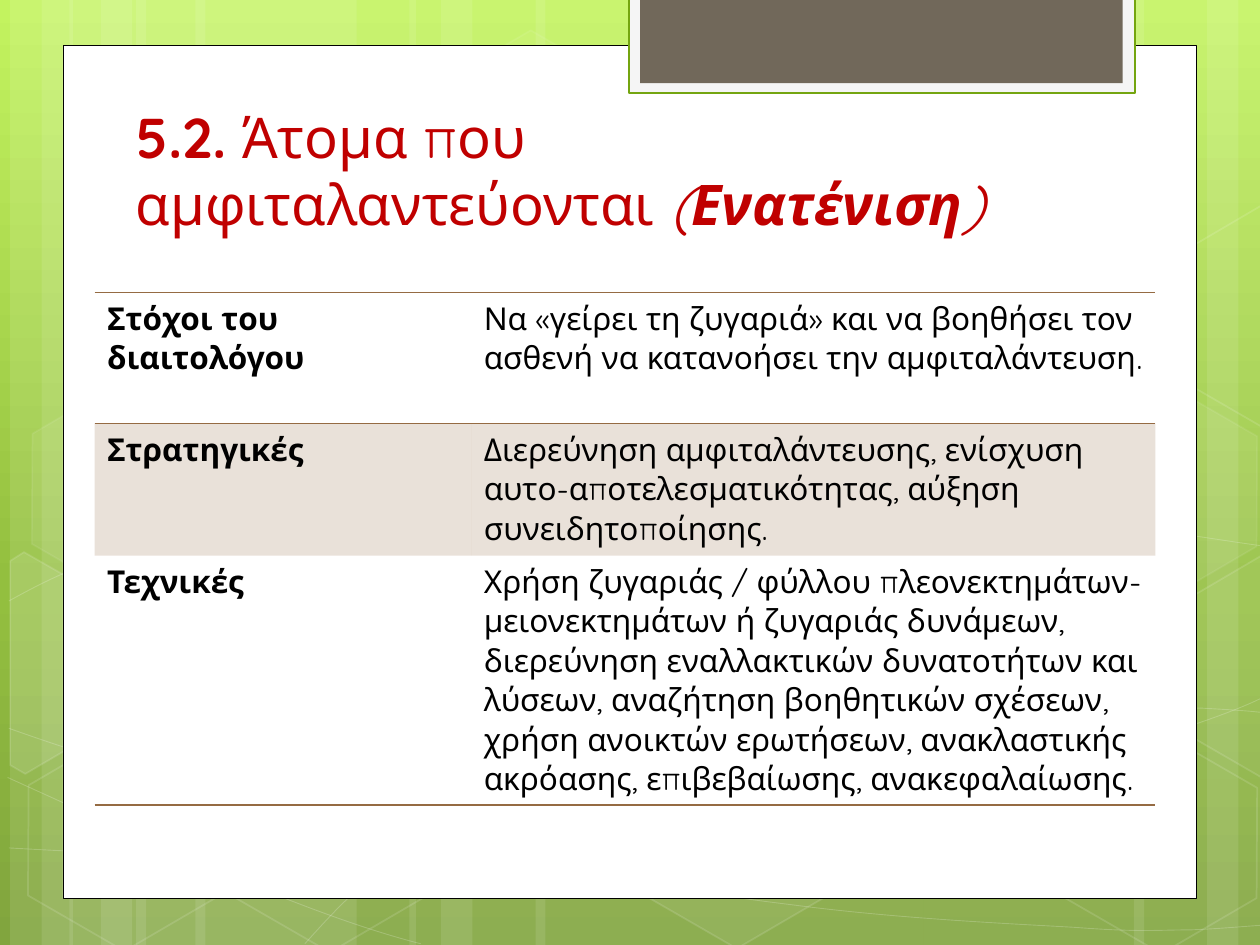
from copy import deepcopy
from math import cos, radians, sin
from typing import NamedTuple, Optional

from lxml import etree
from pptx import Presentation
from pptx.dml.color import RGBColor
from pptx.enum.shapes import MSO_SHAPE
from pptx.enum.text import MSO_ANCHOR
from pptx.oxml.ns import qn
from pptx.util import Inches, Pt

RECTANGLE = MSO_SHAPE.RECTANGLE
HEXAGON = MSO_SHAPE.HEXAGON
BOTTOM = MSO_ANCHOR.BOTTOM
FONT = "Quicksand"
PLAIN_TABLE_STYLE = "{2D5ABB26-0587-4C30-8999-92F81FD0307C}"
HEXAGON_TURN = 30
COLORS = {
    "white": "FFFFFF", "black": "000000", "title": "C00000", "brown": "956B43",
    "tab": "F5F5F5", "tab_line": "74A510", "tab_inner": "71685A",
}
BACKGROUND_STOPS = [(0, "C3F35F"), (0.62, "93BF3F"), (1, "81A53E")]


class Paint(NamedTuple):
    color: str
    alpha: int = 100
    width: float = 0


class Box(NamedTuple):
    left: float
    top: float
    width: float
    height: float


class Hexagon(NamedTuple):
    left: float
    top: float
    fill_alpha: int
    line_alpha: int


class CutHexagon(NamedTuple):
    center: tuple
    points: list
    fill_alpha: int


class TableRow(NamedTuple):
    height: float
    label: str
    text: str
    borders: tuple
    fill: Optional[Paint] = None


STRIPES = [(1.08, 1.75), (0.08, 0.5), (0.33, 0.83), (1.55, 1.75), (0.55, 0.5), (0.8, 0.83),
           (7.33, 1.75), (9.58, 0.5), (9, 0.83), (4.25, 3.08), (3.25, 0.5), (3.5, 0.83)]

# Each curve is a start point followed by cubic segments of three points.
CURVES = [
    [(0.07, 6.73), (0.61, 6.76), (1.15, 6.79), (1.9, 6.78), (2.65, 6.77), (3.58, 6.75),
     (4.58, 6.65), (5.58, 6.55), (7, 6.36), (7.92, 6.17), (8.83, 5.98), (9.77, 5.68), (10.07, 5.51)],
    [(0.07, 4.77), (0.36, 4.61), (0.65, 4.46), (1.21, 4.31), (1.78, 4.16), (2.59, 3.94),
     (3.47, 3.87), (4.36, 3.8), (5.44, 3.79), (6.54, 3.87), (7.64, 3.95), (9.47, 4.26), (10.07, 4.34)],
    [(0.06, 6.17), (1.27, 6.72), (2.47, 7.27), (3.34, 7.49)],
    [(0.07, 5.78), (0.38, 5.89), (0.7, 6), (1.28, 6.16), (1.86, 6.31), (2.73, 6.56),
     (3.57, 6.73), (4.4, 6.9), (5.45, 7.08), (6.28, 7.18), (7.11, 7.29), (8, 7.33),
     (8.53, 7.36), (9.05, 7.4), (9.19, 7.38), (9.45, 7.38), (9.71, 7.37), (9.89, 7.35), (10.07, 7.34)],
    [(2.42, 7.49), (2.6, 7.29), (2.78, 7.09), (3.02, 6.91), (3.26, 6.73), (3.6, 6.53),
     (3.88, 6.39), (4.16, 6.25), (4.33, 6.19), (4.7, 6.09), (5.06, 5.99), (5.73, 5.85),
     (6.08, 5.78), (6.44, 5.71), (6.49, 5.71), (6.8, 5.69), (7.11, 5.66), (7.6, 5.63),
     (7.94, 5.62), (8.29, 5.61), (8.86, 5.62), (8.86, 5.62), (9.08, 5.62), (9.31, 5.62),
     (9.53, 5.62), (9.71, 5.63), (9.88, 5.64), (9.97, 5.65), (10.06, 5.66), (10.03, 5.65),
     (10.06, 5.66)],
]
HEXAGONS = [
    Hexagon(3.34, 0.36, 4, 8), Hexagon(4.97, 5.89, 6, 12), Hexagon(0.11, 5.91, 0, 12),
    Hexagon(0.14, 3.12, 7, 8), Hexagon(1.74, 5.92, 0, 12), Hexagon(7.53, 4.53, 10, 12),
    Hexagon(8.34, 5.93, 0, 12), Hexagon(8.34, 3.14, 7, 8),
]
CUT_HEXAGONS = [
    CutHexagon((0.36, 5.35), [(0.08, 4.45), (0.19, 4.38), (0.96, 4.82), (0.95, 5.7),
                              (0.2, 6.14), (0.08, 6.07)], 10),
    CutHexagon((9.85, 5.2), [(9.26, 4.85), (10.01, 4.41), (10.09, 4.46), (10.09, 6.13),
                             (10.02, 6.17), (9.26, 5.73)], 4),
    CutHexagon((9.85, 2.41), [(9.26, 2.07), (10.01, 1.63), (10.1, 1.68), (10.09, 3.35),
                              (10.02, 3.39), (9.26, 2.95)], 0),
]
PANELS = [
    (Box(0.5, 0.36, 9, 6.77), Paint("white"), Paint("black", width=0.5)),
    (Box(4.99, -0.02, 4.02, 0.76), Paint("tab"), Paint("tab_line", width=1.25)),
    (Box(5.08, -0.02, 3.83, 0.68), Paint("tab_inner"), None),
]
TITLE_LINES = [
    [("5.2. ", {"bold": True}), ("Άτομα που", {})],
    [("αμφιταλαντεύονται ", {}), ("(", {"italic": True}),
     ("Ενατένιση", {"bold": True, "italic": True}), (")", {"italic": True})],
]
TABLE_ROWS = [
    TableRow(1.04, "Στόχοι του διαιτολόγου",
             "Να «γείρει τη ζυγαριά» και να βοηθήσει τον ασθενή να κατανοήσει την αμφιταλάντευση.",
             ("a:lnT", "a:lnB")),
    TableRow(1.05, "Στρατηγικές",
             "Διερεύνηση αμφιταλάντευσης, ενίσχυση αυτο-αποτελεσματικότητας, αύξηση "
             "συνειδητοποίησης.", (), Paint("brown", 20)),
    TableRow(1.98, "Τεχνικές",
             "Χρήση ζυγαριάς / φύλλου πλεονεκτημάτων-μειονεκτημάτων ή ζυγαριάς δυνάμεων, "
             "διερεύνηση εναλλακτικών δυνατοτήτων και λύσεων, αναζήτηση βοηθητικών σχέσεων, "
             "χρήση ανοικτών ερωτήσεων, ανακλαστικής ακρόασης, επιβεβαίωσης, ανακεφαλαίωσης.",
             ("a:lnB",)),
]


def paint_fill(fill, parent, paint: Optional[Paint]) -> None:
    """Fill with a colour; parent is the XML element that holds the fill."""
    if paint is None or paint.alpha == 0:
        fill.background()
        return
    fill.solid()
    fill.fore_color.rgb = RGBColor.from_string(COLORS[paint.color])
    if paint.alpha < 100:
        color = parent.find(qn("a:solidFill"))[0]
        etree.SubElement(color, qn("a:alpha"), val=str(paint.alpha * 1000))


def style_shape(shape, fill: Optional[Paint], line: Optional[Paint]) -> None:
    shape.shadow.inherit = False
    properties = shape._element.spPr
    paint_fill(shape.fill, properties, fill)
    if line:
        shape.line.width = Pt(line.width)
    paint_fill(shape.line.fill, properties.find(qn("a:ln")), line)


def add_preset(slide, preset, box: Box, fill: Optional[Paint], line: Optional[Paint]):
    shape = slide.shapes.add_shape(preset, *(Inches(length) for length in box))
    style_shape(shape, fill, line)
    return shape


def add_outline(slide, points: list, closed: bool, fill: Optional[Paint], line: Paint):
    start, *rest = [(Inches(x), Inches(y)) for x, y in points]
    builder = slide.shapes.build_freeform(*start)
    builder.add_line_segments(rest, close=closed)
    shape = builder.convert_to_shape()
    style_shape(shape, fill, line)
    return shape


def add_curve(slide, points: list) -> None:
    """Draw a freeform whose line segments are joined, three by three, into cubic ones."""
    shape = add_outline(slide, points, False, None, Paint("white", 20, 0.5))
    outline = shape._element.xpath(".//a:path")[0]
    segments = outline.findall(qn("a:lnTo"))
    for first in range(0, len(segments), 3):
        cubic = etree.SubElement(outline, qn("a:cubicBezTo"))
        for segment in segments[first:first + 3]:
            cubic.append(segment[0])
            outline.remove(segment)


def add_cut_hexagon(slide, item: CutHexagon) -> None:
    """Lay the outline flat around its centre, then turn the shape."""
    cosine, sine = cos(radians(HEXAGON_TURN)), sin(radians(HEXAGON_TURN))
    center_x, center_y = item.center
    offsets = [(x - center_x, y - center_y) for x, y in item.points]
    flat = [(center_x + x * cosine + y * sine, center_y - x * sine + y * cosine)
            for x, y in offsets]
    shape = add_outline(slide, flat, True, Paint("white", item.fill_alpha), Paint("white", 12, 1))
    shape.rotation = HEXAGON_TURN


def add_background(slide) -> None:
    fill = slide.background.fill
    fill.gradient()
    fill.gradient_angle = 270
    stop_list = slide.element.xpath(".//a:gsLst")[0]
    stop_list.append(deepcopy(stop_list[-1]))
    for stop, (position, color) in zip(fill.gradient_stops, BACKGROUND_STOPS):
        stop.position = position
        stop.color.rgb = RGBColor.from_string(color)


def add_run(paragraph, text: str, size: int, color: str, **formats) -> None:
    run = paragraph.add_run()
    run.text = text
    values = {"name": FONT, "size": Pt(size), "bold": False, "italic": False, **formats}
    for name, value in values.items():
        setattr(run.font, name, value)
    run.font.color.rgb = RGBColor.from_string(COLORS[color])


def add_title(slide) -> None:
    box = Box(0.98, 0.68, 7.68, 1.25)
    frame = slide.shapes.add_textbox(*(Inches(length) for length in box)).text_frame
    frame.word_wrap = True
    frame.vertical_anchor = BOTTOM
    paragraph = frame.paragraphs[0]
    for number, line in enumerate(TITLE_LINES):
        if number:
            paragraph.add_line_break()
        for text, formats in line:
            add_run(paragraph, text, 32, "title", **formats)


def add_border(cell, tag: str) -> None:
    border = etree.SubElement(cell._tc.get_or_add_tcPr(), qn(tag), w=str(Pt(1)))
    fill = etree.SubElement(border, qn("a:solidFill"))
    etree.SubElement(fill, qn("a:srgbClr"), val=COLORS["brown"])


def add_strategy_table(slide) -> None:
    box = Box(0.75, 2.32, 8.42, sum(row.height for row in TABLE_ROWS))
    frame = slide.shapes.add_table(len(TABLE_ROWS), 2, *(Inches(length) for length in box))
    table = frame.table
    table.first_row = table.horz_banding = False
    frame._element.xpath(".//a:tableStyleId")[0].text = PLAIN_TABLE_STYLE
    for column, width in zip(table.columns, (2.99, 5.43)):
        column.width = Inches(width)
    for table_row, row in zip(table.rows, TABLE_ROWS):
        table_row.height = Inches(row.height)
        for cell, text, bold in zip(table_row.cells, (row.label, row.text), (True, False)):
            add_run(cell.text_frame.paragraphs[0], text, 18, "black", bold=bold)
            for tag in row.borders:
                add_border(cell, tag)
            paint_fill(cell.fill, cell._tc.get_or_add_tcPr(), row.fill)


def main() -> None:
    presentation = Presentation()
    presentation.slide_width, presentation.slide_height = Inches(10), Inches(7.5)
    slide = presentation.slides.add_slide(presentation.slide_layouts[6])
    add_background(slide)
    for left, width in STRIPES:
        add_preset(slide, RECTANGLE, Box(left, 0, width, 7.5), Paint("white", 10), None)
    for curve in CURVES:
        add_curve(slide, curve)
    for item in HEXAGONS:
        hexagon = add_preset(slide, HEXAGON, Box(item.left, item.top, 1.75, 1.52),
                             Paint("white", item.fill_alpha), Paint("white", item.line_alpha, 1))
        hexagon.adjustments[0] = 0.285
        hexagon.rotation = HEXAGON_TURN
    for item in CUT_HEXAGONS:
        add_cut_hexagon(slide, item)
    for box, fill, line in PANELS:
        add_preset(slide, RECTANGLE, box, fill, line)
    add_title(slide)
    add_strategy_table(slide)
    presentation.save("out.pptx")


if __name__ == "__main__":
    main()
